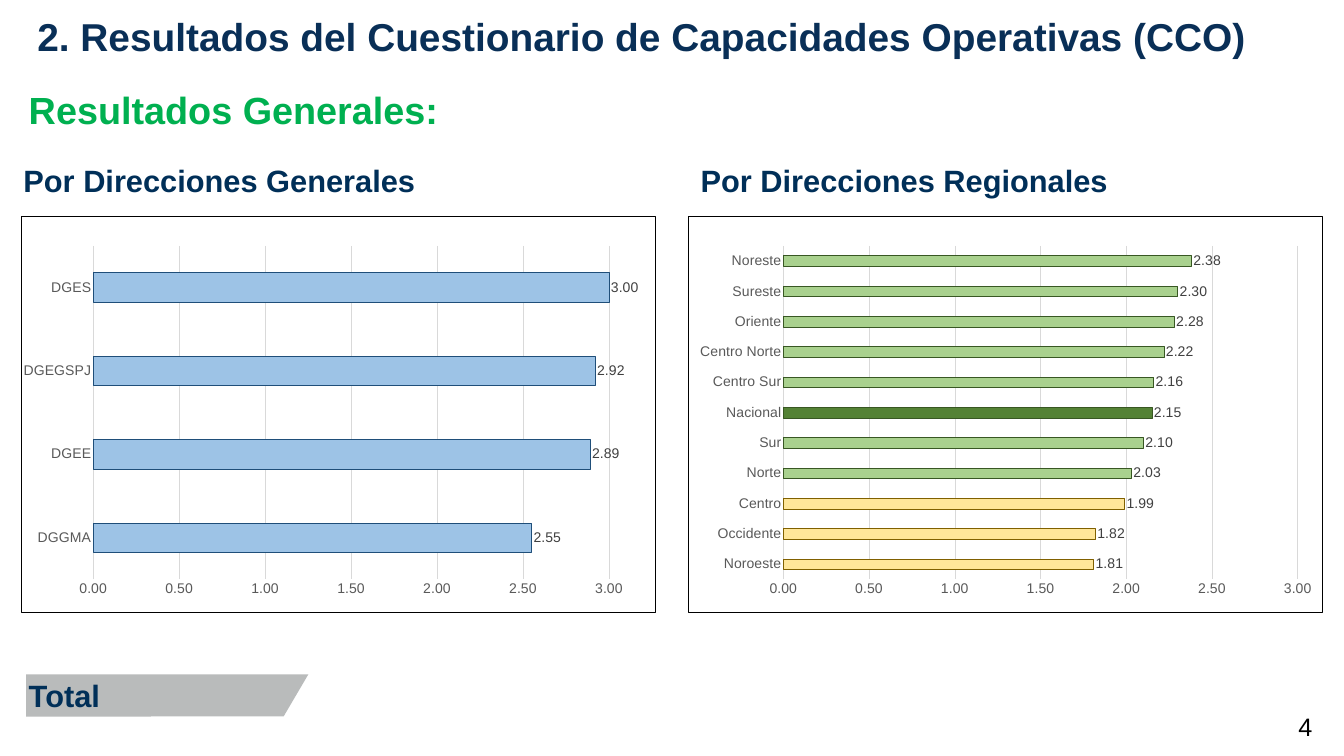
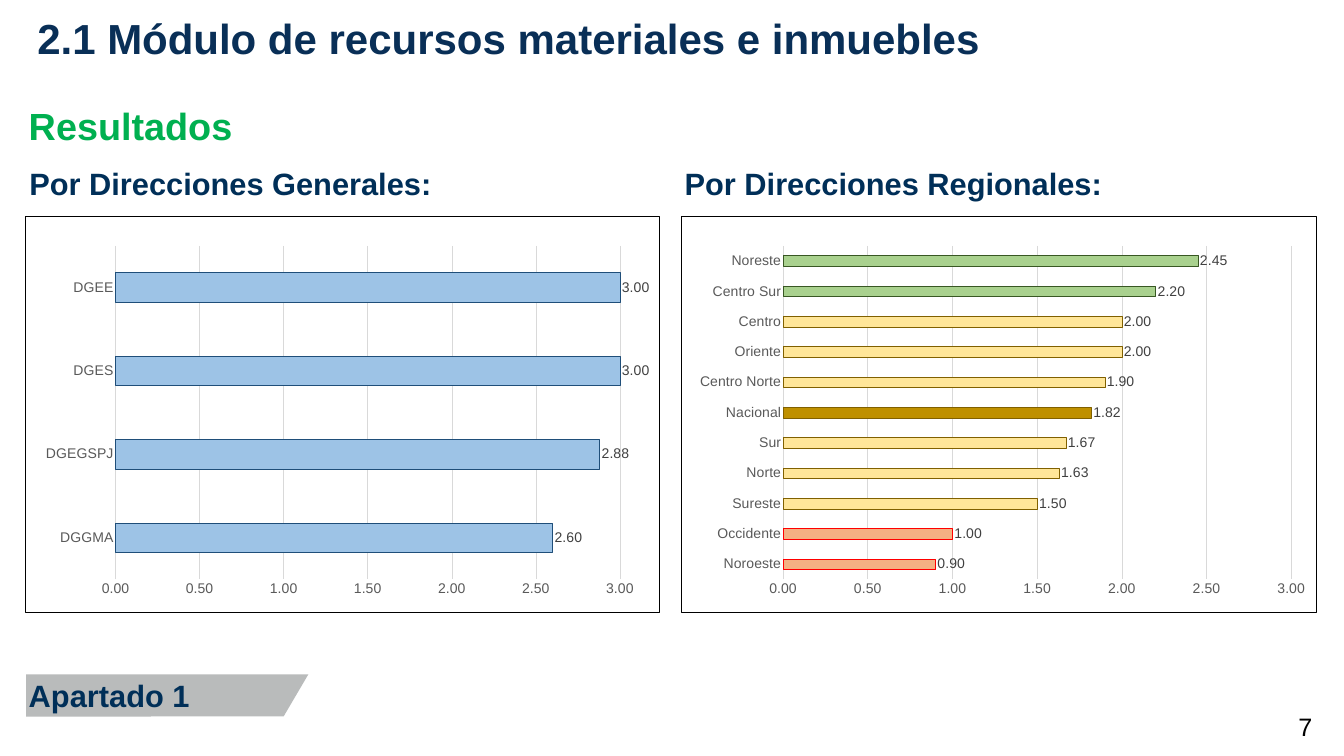
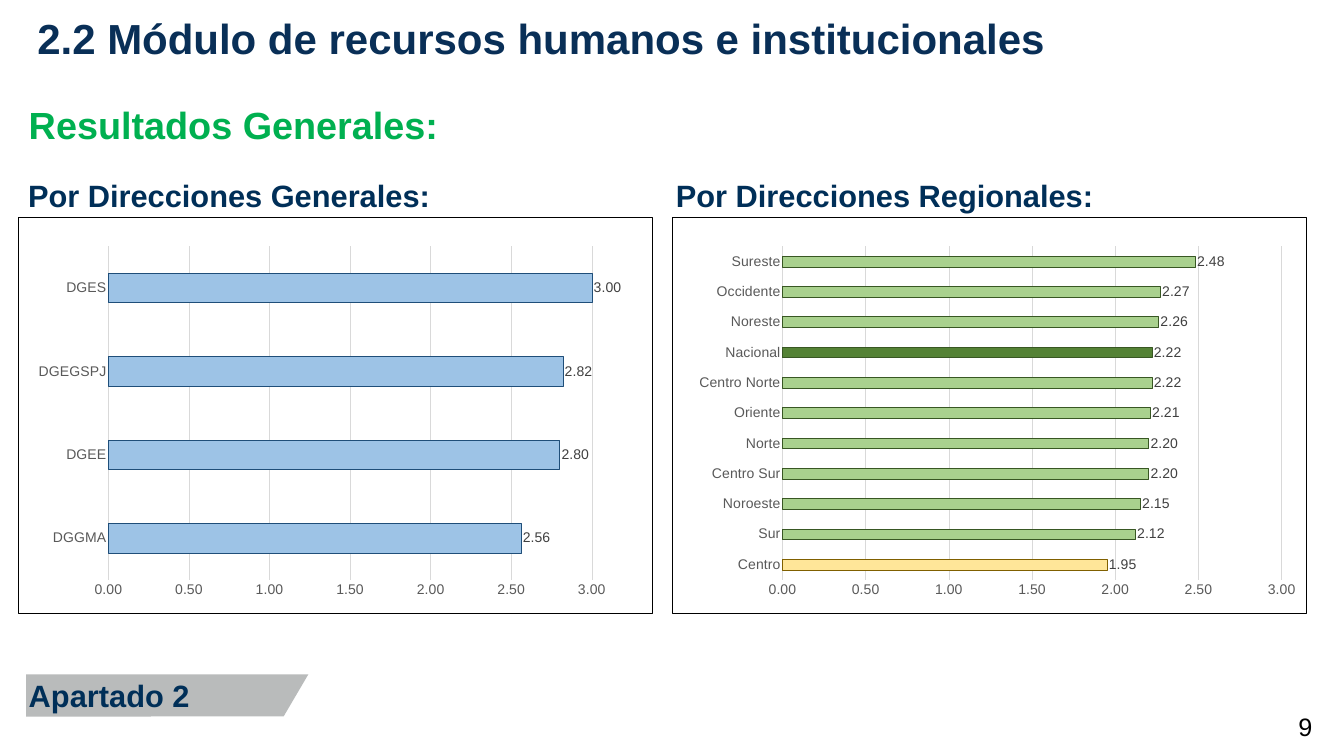
"""Build three slides of operating capacity results by general and regional directorate."""
import pptx
import pptx.chart.data
import pptx.dml.color
import pptx.enum.chart
import pptx.enum.text
import pptx.oxml
import pptx.oxml.ns
import pptx.util
from pptx.util import Cm

COLORS = {
    "title": "092F57", "heading": "002F58", "section": "00B050", "tag": "B9BBBB",
    "black": "000000", "axis": "595959", "label": "404040", "grid": "D9D9D9",
}
BANDS = {
    "general": {"fill": "9DC3E6", "national": "9DC3E6", "line": "1F4E79"},
    "high": {"fill": "A9D18E", "national": "548235", "line": "385723"},
    "medium": {"fill": "FFE699", "national": "BF9000", "line": "806000"},
    "low": {"fill": "F4B183", "national": "F4B183", "line": "FF0000"},
}
RGB = {name: pptx.dml.color.RGBColor.from_string(value) for name, value in COLORS.items()}
ALIGN = pptx.enum.text.PP_ALIGN
ANCHOR = pptx.enum.text.MSO_ANCHOR
NO_TICK = pptx.enum.chart.XL_TICK_MARK.NONE
TIGHT = {f"margin_{side}": Cm(0.13) for side in ("left", "top", "right", "bottom")}

SLIDES = [
    {
        "number": "4", "title": "2. Resultados del Cuestionario de Capacidades Operativas (CCO)",
        "title_size": 55.5, "section": "Resultados Generales:", "section_top": 4.24,
        "tag": "Total", "heading_top": 8, "chart_top": 10.9,
        "panels": [
            {"heading": "Por Direcciones Generales", "heading_left": 0.15, "chart_left": 1.04,
             "plot": (0.114, 0.813), "general": True,
             "values": {"DGGMA": 2.55, "DGEE": 2.89, "DGEGSPJ": 2.92, "DGES": 3}},
            {"heading": "Por Direcciones Regionales", "heading_left": 34.67, "chart_left": 34.67,
             "plot": (0.15, 0.811), "general": False,
             "values": {"Noroeste": 1.81, "Occidente": 1.82, "Centro": 1.99, "Norte": 2.03,
                        "Sur": 2.1, "Nacional": 2.15, "Centro Sur": 2.16, "Centro Norte": 2.22,
                        "Oriente": 2.28, "Sureste": 2.3, "Noreste": 2.38}},
        ],
    },
    {
        "number": "7", "title": "2.1 Módulo de recursos materiales e inmuebles",
        "title_size": 60, "section": "Resultados", "section_top": 5.05,
        "tag": "Apartado 1", "heading_top": 8.15, "chart_top": 10.9,
        "panels": [
            {"heading": "Por Direcciones Generales:", "heading_left": 0.71, "chart_left": 1.24,
             "plot": (0.143, 0.795), "general": True,
             "values": {"DGGMA": 2.6, "DGEGSPJ": 2.88, "DGES": 3, "DGEE": 3}},
            {"heading": "Por Direcciones Regionales: ", "heading_left": 34.34, "chart_left": 34.34,
             "plot": (0.16, 0.801), "general": False,
             "values": {"Noroeste": 0.9, "Occidente": 1, "Sureste": 1.5, "Norte": 1.63,
                        "Sur": 1.67, "Nacional": 1.82, "Centro Norte": 1.9, "Oriente": 2,
                        "Centro": 2, "Centro Sur": 2.2, "Noreste": 2.45}},
        ],
    },
    {
        "number": "9", "title": "2.2 Módulo de recursos humanos e institucionales",
        "title_size": 60, "section": "Resultados Generales:", "section_top": 4.98,
        "tag": "Apartado 2", "heading_top": 8.76, "chart_top": 10.92,
        "panels": [
            {"heading": "Por Direcciones Generales:", "heading_left": 0.64, "chart_left": 0.91,
             "plot": (0.142, 0.762), "general": True,
             "values": {"DGGMA": 2.56, "DGEE": 2.8, "DGEGSPJ": 2.82, "DGES": 3}},
            {"heading": "Por Direcciones Regionales:", "heading_left": 33.68, "chart_left": 33.86,
             "plot": (0.174, 0.787), "general": False,
             "values": {"Centro": 1.95, "Sur": 2.12, "Noroeste": 2.15, "Centro Sur": 2.2,
                        "Norte": 2.2, "Oriente": 2.21, "Centro Norte": 2.22, "Nacional": 2.22,
                        "Noreste": 2.26, "Occidente": 2.27, "Sureste": 2.48}},
        ],
    },
]


def set_font(font, size, color, bold=False):
    """Apply the shared typeface with a size, colour and weight."""
    values = {"name": "Arial", "size": pptx.util.Pt(size), "bold": bold}
    for name, value in values.items():
        setattr(font, name, value)
    font.color.rgb = RGB[color]


def write(box, text, size, color, bold=True, align=ALIGN.LEFT, spacing=None, **frame_values):
    """Fill a shape with one formatted paragraph."""
    frame = box.text_frame
    for name, value in {"word_wrap": True, **frame_values}.items():
        setattr(frame, name, value)
    para = frame.paragraphs[0]
    for name, value in {"alignment": align, "line_spacing": spacing}.items():
        setattr(para, name, value)
    span = para.add_run()
    span.text = text
    set_font(span.font, size, color, bold)


deck = pptx.Presentation()
deck.slide_width, deck.slide_height = Cm(67.74), Cm(38.1)

for content in SLIDES:
    page = deck.slides.add_slide(deck.slide_layouts[6])
    shapes = page.shapes

    number = shapes.add_textbox(Cm(62.03), Cm(35.59), Cm(4.37), Cm(2.06))
    write(number, content["number"], 36, "black", bold=False, align=ALIGN.RIGHT,
          vertical_anchor=ANCHOR.MIDDLE)

    for panel in content["panels"]:
        heading = shapes.add_textbox(Cm(panel["heading_left"]), Cm(content["heading_top"]),
                                     Cm(21.84), Cm(2.9))
        write(heading, panel["heading"], 44, "heading", align=ALIGN.CENTER, **TIGHT)

        data = pptx.chart.data.CategoryChartData(number_format="0.00")
        data.categories = list(panel["values"])
        data.add_series("Series 1", list(panel["values"].values()))
        chart = shapes.add_chart(pptx.enum.chart.XL_CHART_TYPE.BAR_CLUSTERED,
                                 Cm(panel["chart_left"]), Cm(content["chart_top"]),
                                 Cm(32), Cm(19.99), data).chart
        chart.has_title = chart.has_legend = False
        set_font(chart.font, 20, "black")

        category_axis, value_axis = chart.category_axis, chart.value_axis
        for axis in (category_axis, value_axis):
            axis.major_tick_mark = axis.minor_tick_mark = NO_TICK
            set_font(axis.tick_labels.font, 20, "axis")
        scale = {"minimum_scale": 0, "maximum_scale": 3, "major_unit": 0.5,
                 "has_major_gridlines": True}
        for name, value in scale.items():
            setattr(value_axis, name, value)
        value_axis.tick_labels.number_format = "0.00"
        value_axis.tick_labels.number_format_is_linked = False
        value_axis.format.line.fill.background()
        for line in (category_axis.format.line, value_axis.major_gridlines.format.line):
            line.color.rgb = RGB["grid"]
            line.width = pptx.util.Pt(0.75)

        plot = chart.plots[0]
        plot.gap_width = 182
        plot.vary_by_categories = False
        plot.has_data_labels = True
        labels = plot.data_labels
        label_values = {"show_value": True, "number_format": "0.00",
                        "number_format_is_linked": False,
                        "position": pptx.enum.chart.XL_LABEL_POSITION.OUTSIDE_END}
        for name, value in label_values.items():
            setattr(labels, name, value)
        set_font(labels.font, 20, "label")

        series = plot.series[0]
        series.invert_if_negative = False
        for index, (region, score) in enumerate(panel["values"].items()):
            if panel["general"]:
                band = BANDS["general"]
            else:
                band = BANDS["low" if score <= 1 else "medium" if score <= 2 else "high"]
            fill = band["national" if region == "Nacional" else "fill"]
            bar = series.points[index].format
            bar.fill.solid()
            bar.fill.fore_color.rgb = pptx.dml.color.RGBColor.from_string(fill)
            bar.line.color.rgb = pptx.dml.color.RGBColor.from_string(band["line"])
            bar.line.width = pptx.util.Pt(0.75)

        chart_node = chart.element.find(pptx.oxml.ns.qn("c:chart"))
        plot_area = chart_node.find(pptx.oxml.ns.qn("c:plotArea"))
        for old_layout in plot_area.findall(pptx.oxml.ns.qn("c:layout")):
            plot_area.remove(old_layout)
        plot_left, plot_width = panel["plot"]
        plot_area.insert(0, pptx.oxml.parse_xml(
            f'<c:layout {pptx.oxml.ns.nsdecls("c")}><c:manualLayout>'
            '<c:layoutTarget val="inner"/><c:xMode val="edge"/><c:yMode val="edge"/>'
            f'<c:x val="{plot_left}"/><c:y val="0.074"/>'
            f'<c:w val="{plot_width}"/><c:h val="0.842"/></c:manualLayout></c:layout>'))
        chart_node.addnext(pptx.oxml.parse_xml(
            f'<c:spPr {pptx.oxml.ns.nsdecls("c", "a")}><a:noFill/><a:ln w="9525"><a:solidFill>'
            f'<a:srgbClr val="{COLORS["black"]}"/></a:solidFill></a:ln></c:spPr>'))

    outline = shapes.build_freeform(Cm(1.32), Cm(33.99))
    corners = [(15.54, 33.99), (14.3, 36.1), (1.32, 36.12)]
    outline.add_line_segments([(Cm(x), Cm(y)) for x, y in corners], close=True)
    tag = outline.convert_to_shape()
    tag.shadow.inherit = False
    tag.fill.solid()
    tag.fill.fore_color.rgb = RGB["tag"]
    tag.line.fill.background()
    write(tag, content["tag"], 44, "heading", vertical_anchor=ANCHOR.MIDDLE, **TIGHT)

    title = shapes.add_textbox(Cm(1.63), Cm(0.79), Cm(64.08), Cm(2.62))
    write(title, content["title"], content["title_size"], "title", spacing=0.9)
    section = shapes.add_textbox(Cm(1.32), Cm(content["section_top"]), Cm(21.84), Cm(2.9))
    write(section, content["section"], 54, "section", **TIGHT)

deck.save("out.pptx")
